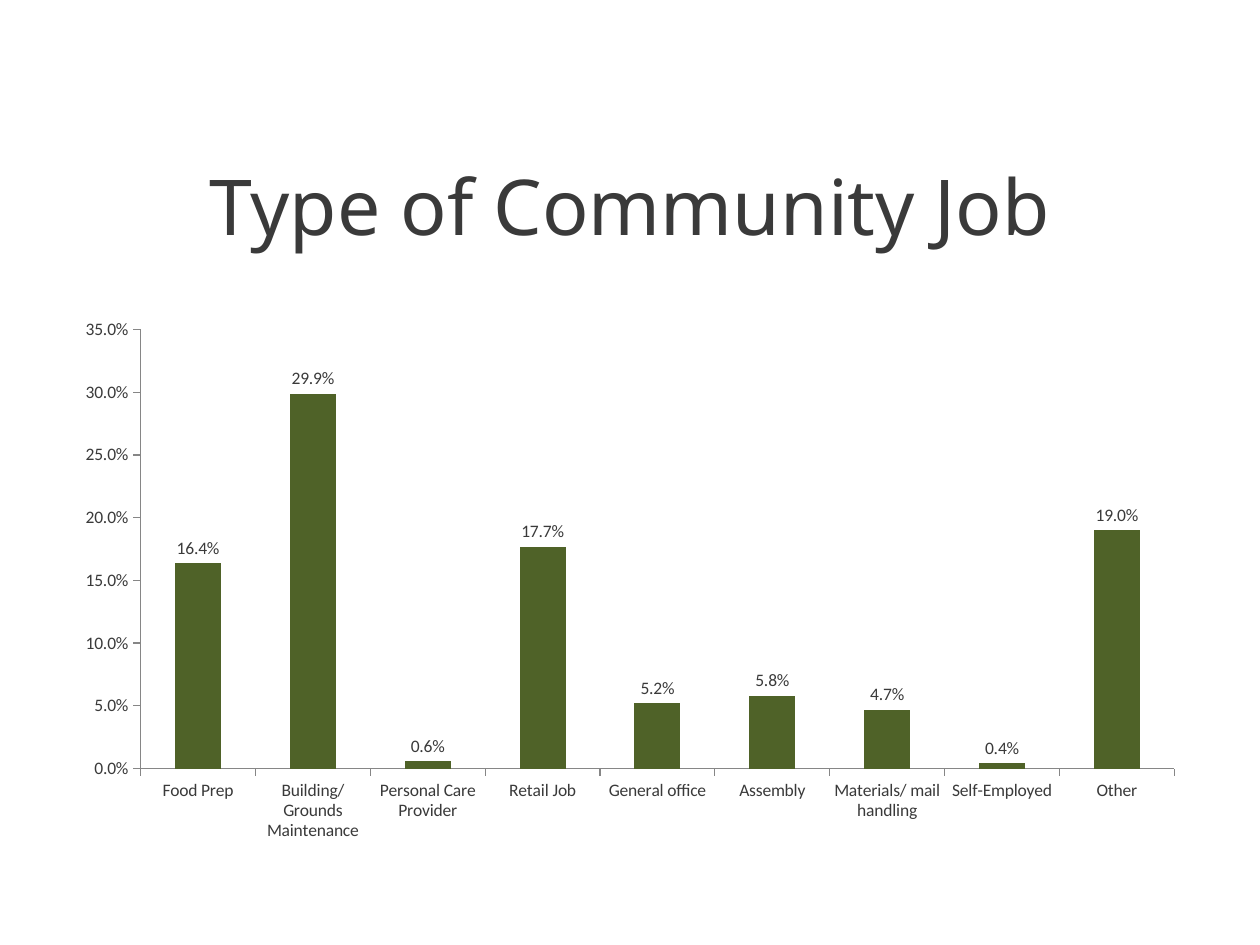
from typing import NamedTuple

from pptx import Presentation
from pptx.chart.axis import _BaseAxis
from pptx.chart.data import CategoryChartData
from pptx.dml.color import RGBColor
from pptx.enum.chart import XL_CHART_TYPE, XL_LABEL_POSITION, XL_TICK_MARK
from pptx.enum.text import MSO_ANCHOR, PP_ALIGN
from pptx.util import Emu, Pt

PX_PER_INCH = 126
COLORS = {"text": "3A3A3A", "bar": "4F6228", "axis": "868686"}
PERCENT = "0.0%"


class Job(NamedTuple):
    name: str
    share: float


class Box(NamedTuple):
    left: int
    top: int
    width: int
    height: int


JOBS = [
    Job("Food Prep", 0.164),
    Job("Building/Grounds Maintenance", 0.299),
    Job("Personal Care Provider", 0.006),
    Job("Retail Job", 0.177),
    Job("General office", 0.052),
    Job("Assembly", 0.058),
    Job("Materials/ mail handling", 0.047),
    Job("Self-Employed", 0.004),
    Job("Other", 0.19),
]
TITLE_BOX = Box(63, 126, 1134, 158)
CHART_BOX = Box(63, 309, 1134, 542)


def px(n: int) -> Emu:
    return Emu(round(n * 914400 / PX_PER_INCH))


def color(name: str) -> RGBColor:
    return RGBColor.from_string(COLORS[name])


def add_title(s, text: str, box: Box) -> None:
    sp = s.shapes.title
    sp.left, sp.top, sp.width, sp.height = map(px, box)
    tf = sp.text_frame
    tf.text = text
    tf.word_wrap = True
    tf.vertical_anchor = MSO_ANCHOR.MIDDLE
    p = tf.paragraphs[0]
    p.alignment = PP_ALIGN.CENTER
    p.font.name = "Noto Sans"
    p.font.size = Pt(44)
    p.font.color.rgb = color("text")


def style_axis(axis: _BaseAxis) -> None:
    axis.has_major_gridlines = False
    axis.major_tick_mark = XL_TICK_MARK.OUTSIDE
    axis.minor_tick_mark = XL_TICK_MARK.NONE
    axis.format.line.color.rgb = color("axis")
    axis.format.line.width = Pt(0.75)


def add_job_chart(s, jobs: list[Job], box: Box) -> None:
    data = CategoryChartData(number_format=PERCENT)
    data.categories = [job.name for job in jobs]
    data.add_series("Series 1", [job.share for job in jobs])
    chart = s.shapes.add_chart(
        XL_CHART_TYPE.COLUMN_CLUSTERED, *map(px, box), data
    ).chart
    chart.has_title = False
    chart.has_legend = False
    chart.font.name = "Calibri"
    chart.font.size = Pt(10)
    chart.font.color.rgb = color("text")

    style_axis(chart.category_axis)
    style_axis(chart.value_axis)
    chart.value_axis.minimum_scale = 0
    chart.value_axis.maximum_scale = 0.35
    chart.value_axis.major_unit = 0.05
    chart.value_axis.tick_labels.number_format = PERCENT
    chart.value_axis.tick_labels.number_format_is_linked = False

    plot = chart.plots[0]
    plot.vary_by_categories = False
    plot.gap_width = 150
    fill = plot.series[0].format.fill
    fill.solid()
    fill.fore_color.rgb = color("bar")
    plot.has_data_labels = True
    labels = plot.data_labels
    labels.show_value = True
    labels.number_format = PERCENT
    labels.number_format_is_linked = False
    labels.position = XL_LABEL_POSITION.OUTSIDE_END


def main() -> None:
    prs = Presentation()
    prs.slide_width, prs.slide_height = px(1260), px(945)
    s = prs.slides.add_slide(prs.slide_layouts[5])
    add_title(s, "Type of Community Job", TITLE_BOX)
    add_job_chart(s, JOBS, CHART_BOX)
    prs.save("out.pptx")


if __name__ == "__main__":
    main()
